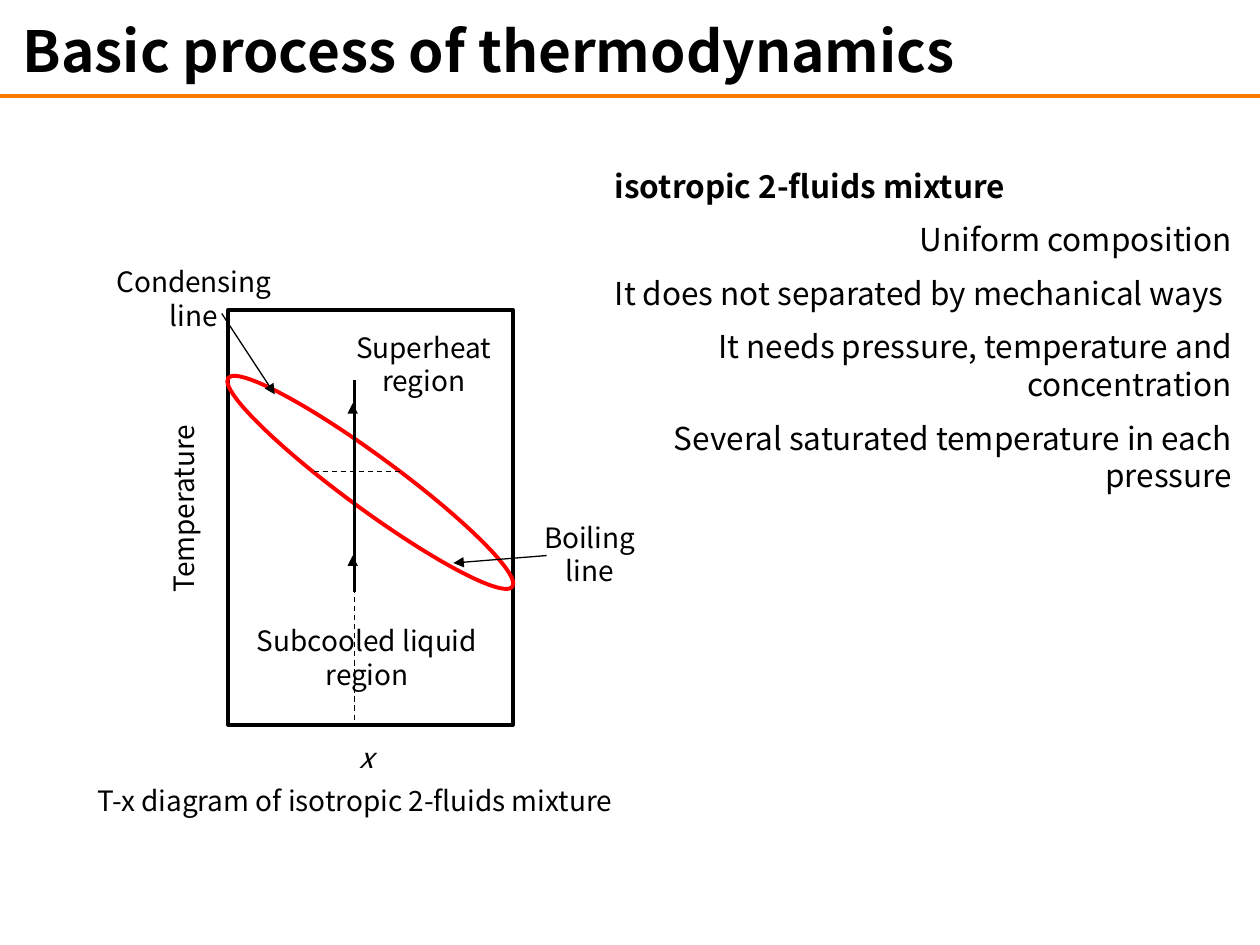
from typing import NamedTuple

from lxml.etree import SubElement
from pptx import Presentation
from pptx.dml.color import RGBColor
from pptx.enum.dml import MSO_LINE_DASH_STYLE as Dash
from pptx.enum.shapes import MSO_CONNECTOR_TYPE as Connector, MSO_SHAPE as Shape
from pptx.enum.text import MSO_ANCHOR as Anchor, MSO_AUTO_SIZE as AutoSize, PP_ALIGN as Align
from pptx.oxml.ns import qn
from pptx.util import Cm, Pt

BLACK = RGBColor(0x00, 0x00, 0x00)
RED = RGBColor(0xFF, 0x00, 0x00)
ORANGE = RGBColor(0xFF, 0x7A, 0x00)
FONT = "Noto Sans CJK KR"


class Outline(NamedTuple):
    kind: Shape
    left: float
    top: float
    width: float
    height: float
    color: RGBColor
    rotation: float = 0


class Line(NamedTuple):
    x1: float
    y1: float
    x2: float
    y2: float
    weight: float = 0.75
    color: RGBColor = BLACK
    dashed: bool = False
    arrow: bool = False


class Label(NamedTuple):
    text: str
    left: float
    top: float
    width: float
    height: float = 0.94
    rotation: float = 0
    italic: bool = False


class Point(NamedTuple):
    text: str
    align: Align = Align.RIGHT
    bold: bool = False


AXIS_X = 7.14  # composition followed by the process

OUTLINES = [
    Outline(Shape.RECTANGLE, 4.6, 6.25, 5.74, 8.36, BLACK),
    Outline(Shape.OVAL, 3.91, 9.19, 7.11, 1.07, RED, 36.3),
]
LINES = [
    Line(0, 1.93, 25.4, 1.93, weight=2, color=ORANGE),
    Line(AXIS_X, 7.67, AXIS_X, 14.58, dashed=True),
    Line(AXIS_X, 7.67, AXIS_X, 11.94, weight=1.5),
    Line(6.32, 9.5, 8.13, 9.5, dashed=True),
    Line(7.11, 11.35, 7.11, 11.2, arrow=True),
    Line(7.11, 8.26, 7.11, 8.13, arrow=True),
    Line(4.47, 6.32, 5.54, 7.95, arrow=True),
    Line(11.02, 11.2, 9.14, 11.35, arrow=True),
]
LABELS = [
    Label("Superheat\vregion", 6.76, 6.53, 3.56, 1.63),
    Label("Subcooled liquid\vregion", 4.57, 12.45, 5.66, 1.63),
    Label("Temperature", 0.71, 9.78, 5.99, rotation=270),
    Label("x", 4.55, 14.81, 5.66, italic=True),
    Label("Condensing\vline", 1.8, 5.21, 4.22, 1.63),
    Label("Boiling\vline", 9.78, 10.36, 4.22, 1.63),
    Label("T-x diagram of isotropic 2-fluids mixture", 1.37, 15.67, 11.58),
]
POINTS = [
    Point("isotropic 2-fluids mixture", Align.LEFT, bold=True),
    Point("Uniform composition"),
    Point("It does not separated by mechanical ways", Align.LEFT),
    Point("It needs pressure, temperature and concentration"),
    Point("Several saturated temperature in each pressure"),
]


def format_paragraph(paragraph, size: float, align: Align, bold=False, italic=False) -> None:
    paragraph.alignment = align
    for run in paragraph.runs:
        font = run.font
        font.name, font.size = FONT, Pt(size)
        font.bold, font.italic = bold, italic
        font.color.rgb = BLACK


def place(shape, left: float, top: float, width: float, height: float) -> None:
    shape.left, shape.top = Cm(left), Cm(top)
    shape.width, shape.height = Cm(width), Cm(height)


def draw_outline(slide, outline: Outline) -> None:
    box = (Cm(value) for value in outline[1:5])
    shape = slide.shapes.add_shape(outline.kind, *box)
    shape.shadow.inherit = False
    shape.fill.background()
    shape.line.color.rgb = outline.color
    shape.line.width = Pt(2.25)
    shape.rotation = outline.rotation


def draw_line(slide, line: Line) -> None:
    ends = (Cm(value) for value in line[:4])
    connector = slide.shapes.add_connector(Connector.STRAIGHT, *ends)
    connector.line.color.rgb = line.color
    connector.line.width = Pt(line.weight)
    if line.dashed:
        connector.line.dash_style = Dash.DASH
    properties = connector._element.spPr
    if line.arrow:
        SubElement(properties.find(qn("a:ln")), qn("a:tailEnd"), type="triangle")
    SubElement(properties, qn("a:effectLst"))


def draw_label(slide, label: Label) -> None:
    box = (Cm(value) for value in label[1:5])
    shape = slide.shapes.add_textbox(*box)
    shape.rotation = label.rotation
    frame = shape.text_frame
    frame.word_wrap = True
    frame.text = label.text
    format_paragraph(frame.paragraphs[0], 16, Align.CENTER, italic=label.italic)


def fill_title(slide) -> None:
    title = slide.shapes.title
    place(title, 0, 0, 19.71, 2.01)
    frame = title.text_frame
    frame.text = "Basic process of thermodynamics"
    frame.auto_size = AutoSize.NONE
    frame.vertical_anchor = Anchor.MIDDLE
    format_paragraph(frame.paragraphs[0], 32.4, Align.CENTER, bold=True)


def fill_body(slide) -> None:
    body = slide.placeholders[1]
    place(body, 12.14, 3.23, 12.95, 7.95)
    frame = body.text_frame
    frame.text = "\n".join(point.text for point in POINTS)
    frame.auto_size = AutoSize.NONE
    for index, (paragraph, point) in enumerate(zip(frame.paragraphs, POINTS)):
        paragraph.space_before = Pt(9 if index else 0)
        properties = paragraph._p.get_or_add_pPr()
        properties.set("marL", "0")
        properties.set("indent", "0")
        SubElement(properties, qn("a:buNone"))
        format_paragraph(paragraph, 18, point.align, bold=point.bold)


def main() -> None:
    presentation = Presentation()
    presentation.slide_width, presentation.slide_height = Cm(25.4), Cm(19.05)
    slide = presentation.slides.add_slide(presentation.slide_layouts[1])

    # Phase diagram
    for outline in OUTLINES:
        draw_outline(slide, outline)
    for line in LINES:
        draw_line(slide, line)
    for label in LABELS:
        draw_label(slide, label)

    # Title and list
    fill_title(slide)
    fill_body(slide)
    presentation.save("out.pptx")


if __name__ == "__main__":
    main()
